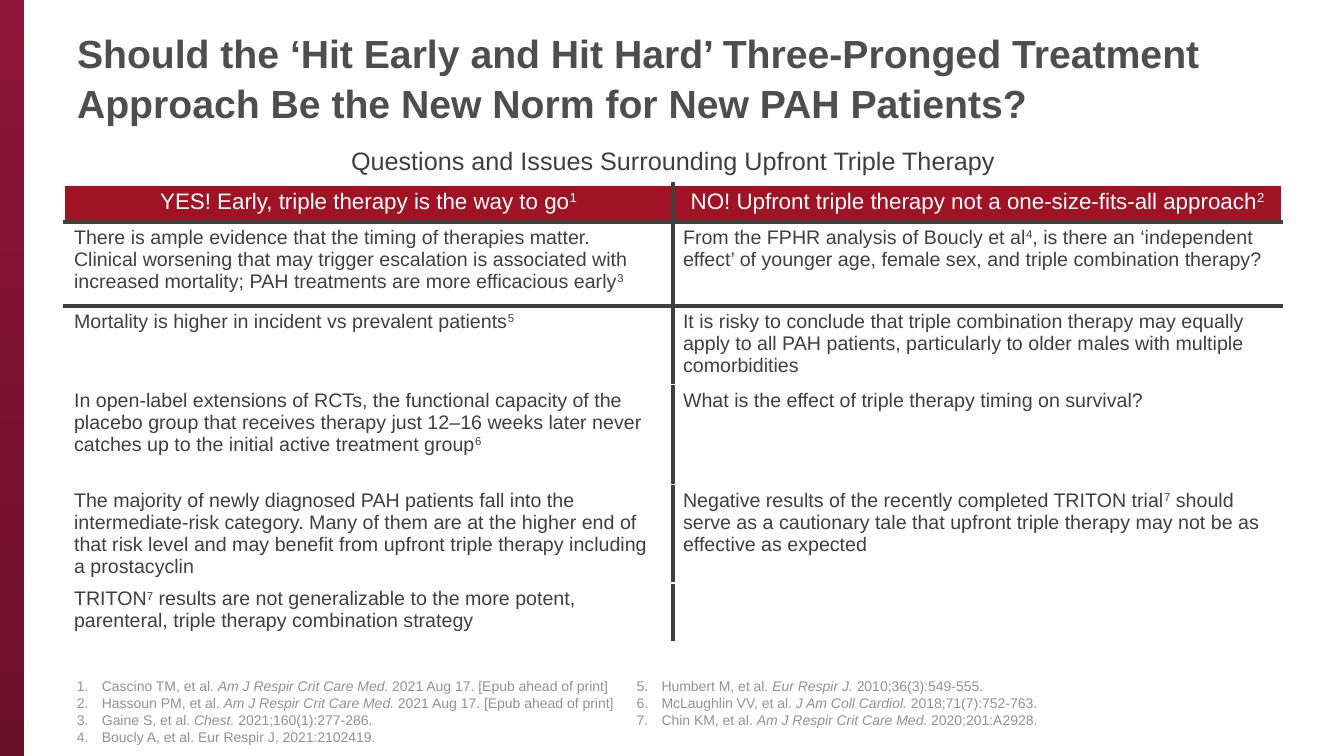
from lxml import etree
from pptx import Presentation
from pptx.dml.color import RGBColor
from pptx.enum.shapes import MSO_SHAPE
from pptx.enum.text import MSO_ANCHOR, MSO_AUTO_SIZE, PP_ALIGN
from pptx.oxml.ns import qn
from pptx.util import Pt

RECT = MSO_SHAPE.RECTANGLE
MIDDLE = MSO_ANCHOR.MIDDLE
FIXED = MSO_AUTO_SIZE.NONE
LEFT, CENTER = PP_ALIGN.LEFT, PP_ALIGN.CENTER
PX = 914400 / 100.8
COLORS = {"title": "4D4E4D", "text": "3F3F3F", "white": "FFFFFF", "head": "A01325",
          "note": "929292", "top": "8E1537", "base": "6B1029"}
FORMS = {
    "title": {"size": Pt(28), "bold": True, "name": "Arial"},
    "topic": {"size": Pt(18), "name": "Arial"},
    "head": {"size": Pt(16), "name": "Arial"},
    "body": {"size": Pt(14), "name": "Arial"},
    "note": {"size": Pt(10), "name": "Arial"},
}
RAISED = ("baseline", "30000")
ITALIC = ("i", "1")
ROWS = [41, 38, 84, 79, 100, 98, 59]
TOPIC = "Questions and Issues Surrounding Upfront Triple Therapy"
CELLS = [
    ("YES! Early, triple therapy is the way to go|1",
     "NO! Upfront triple therapy not a one-size-fits-all approach|2"),
    ("There is ample evidence that the timing of therapies matter.\n"
     "Clinical worsening that may trigger escalation is associated with increased mortality; "
     "PAH treatments are more efficacious early|3",
     "From the FPHR analysis of Boucly et al|4|, is there an ‘independent effect’ of younger age, "
     "female sex, and triple combination therapy?"),
    ("Mortality is higher in incident vs prevalent patients|5",
     "It is risky to conclude that triple combination therapy may equally apply to all PAH patients, "
     "particularly to older males with multiple comorbidities"),
    ("In open-label extensions of RCTs, the functional capacity of the placebo group that receives "
     "therapy just 12–16 weeks later never catches up to the initial active treatment group|6",
     "What is the effect of triple therapy timing on survival?"),
    ("The majority of newly diagnosed PAH patients fall into the intermediate-risk category. "
     "Many of them are at the higher end of that risk level and may benefit from upfront triple "
     "therapy including a prostacyclin",
     "Negative results of the recently completed TRITON trial|7| should serve as a cautionary tale "
     "that upfront triple therapy may not be as effective as expected"),
    ("TRITON|7| results are not generalizable to the more potent,\n"
     "parenteral, triple therapy combination strategy", ""),
]
NOTES = [
    "Cascino TM, et al. |Am J Respir Crit Care Med. |2021 Aug 17. [Epub ahead of print]",
    "Hassoun PM, et al. |Am J Respir Crit Care Med. |2021 Aug 17. [Epub ahead of print]",
    "Gaine S, et al. |Chest. |2021;160(1):277-286.",
    "Boucly A, et al. Eur Respir J, 2021:2102419.",
    "Humbert M, et al. |Eur Respir J. |2010;36(3):549-555.",
    "McLaughlin VV, et al. |J Am Coll Cardiol. |2018;71(7):752-763.",
    "Chin KM, et al. |Am J Respir Crit Care Med. |2020;201:A2928.",
]


def box(*sizes):
    return [round(size * PX) for size in sizes]


def write(frame, text, form, color, align=LEFT, accent=RAISED):
    for n, line in enumerate(text.split("\n")):
        para = frame.add_paragraph() if n else frame.paragraphs[0]
        para.alignment = align
        for k, part in enumerate(line.split("|")):
            if not part:
                continue
            run = para.add_run()
            run.text = part
            for key, value in FORMS[form].items():
                setattr(run.font, key, value)
            run.font.color.rgb = RGBColor.from_string(COLORS[color])
            if k % 2:
                run._r.get_or_add_rPr().set(*accent)


deck = Presentation()
deck.slide_width, deck.slide_height = box(1344, 756)
slide = deck.slides.add_slide(deck.slide_layouts[5])
shapes = slide.shapes

bar = shapes.add_shape(RECT, *box(0, 0, 24, 756))
bar.shadow.inherit = False
bar.line.fill.background()
bar.fill.gradient()
bar.fill.gradient_angle = 270
for stop, name in zip(bar.fill.gradient_stops, ["top", "base"]):
    stop.color.rgb = RGBColor.from_string(COLORS[name])

title = shapes.title
title.left, title.top, title.width, title.height = box(67, 15, 1212, 123)
frame = title.text_frame
frame.auto_size = FIXED
frame.vertical_anchor = MIDDLE
write(frame, "Should the ‘Hit Early and Hit Hard’ Three-Pronged Treatment "
      "Approach Be the New Norm for New PAH Patients?", "title", "title")
frame.paragraphs[0].line_spacing = 1.05

table = shapes.add_table(len(ROWS), 2, *box(64, 143, 1218, sum(ROWS))).table
table.first_row = table.horz_banding = False
for row, height in zip(table.rows, ROWS):
    row.height = box(height)[0]
for col in table.columns:
    col.width = box(609)[0]
table.cell(0, 0).merge(table.cell(0, 1))

for r, row in enumerate(table.rows):
    for c, cell in enumerate(row.cells):
        dark, thin, wide = ("text", 3), ("white", 1), ("white", 3)
        inner = dark if r else thin
        edges = {
            "a:lnL": inner if c else thin,
            "a:lnR": thin if c else inner,
            "a:lnT": {1: wide, 2: dark}.get(r, thin),
            "a:lnB": {0: wide, 1: dark}.get(r, thin),
        }
        if r == 2:
            del edges["a:lnB"]
        if r == 3:
            del edges["a:lnT"]
        props = cell._tc.get_or_add_tcPr()
        for tag, (name, width) in edges.items():
            line = etree.SubElement(props, qn(tag), w=str(Pt(width)))
            fill = etree.SubElement(line, qn("a:solidFill"))
            etree.SubElement(fill, qn("a:srgbClr"), val=COLORS[name])
        if r == 1:
            cell.fill.solid()
            cell.fill.fore_color.rgb = RGBColor.from_string(COLORS["head"])
            write(cell.text_frame, CELLS[0][c], "head", "white", CENTER)
        else:
            cell.fill.background()
        if r > 1:
            write(cell.text_frame, CELLS[r - 1][c], "body", "text")
write(table.cell(0, 0).text_frame, TOPIC, "topic", "text", CENTER)

notes = shapes.add_textbox(*box(67, 673, 1139, 82))
frame = notes.text_frame
frame.word_wrap = True
frame.auto_size = FIXED
frame._txBody.bodyPr.set("numCol", "2")
write(frame, "\n".join(NOTES), "note", "note", accent=ITALIC)
indent = box(25)[0]
for para in frame.paragraphs:
    props = para._p.get_or_add_pPr()
    props.set("marL", str(indent))
    props.set("indent", str(-indent))
    etree.SubElement(props, qn("a:buFont"), typeface="+mj-lt")
    etree.SubElement(props, qn("a:buAutoNum"), type="arabicPeriod")

deck.save("out.pptx")
